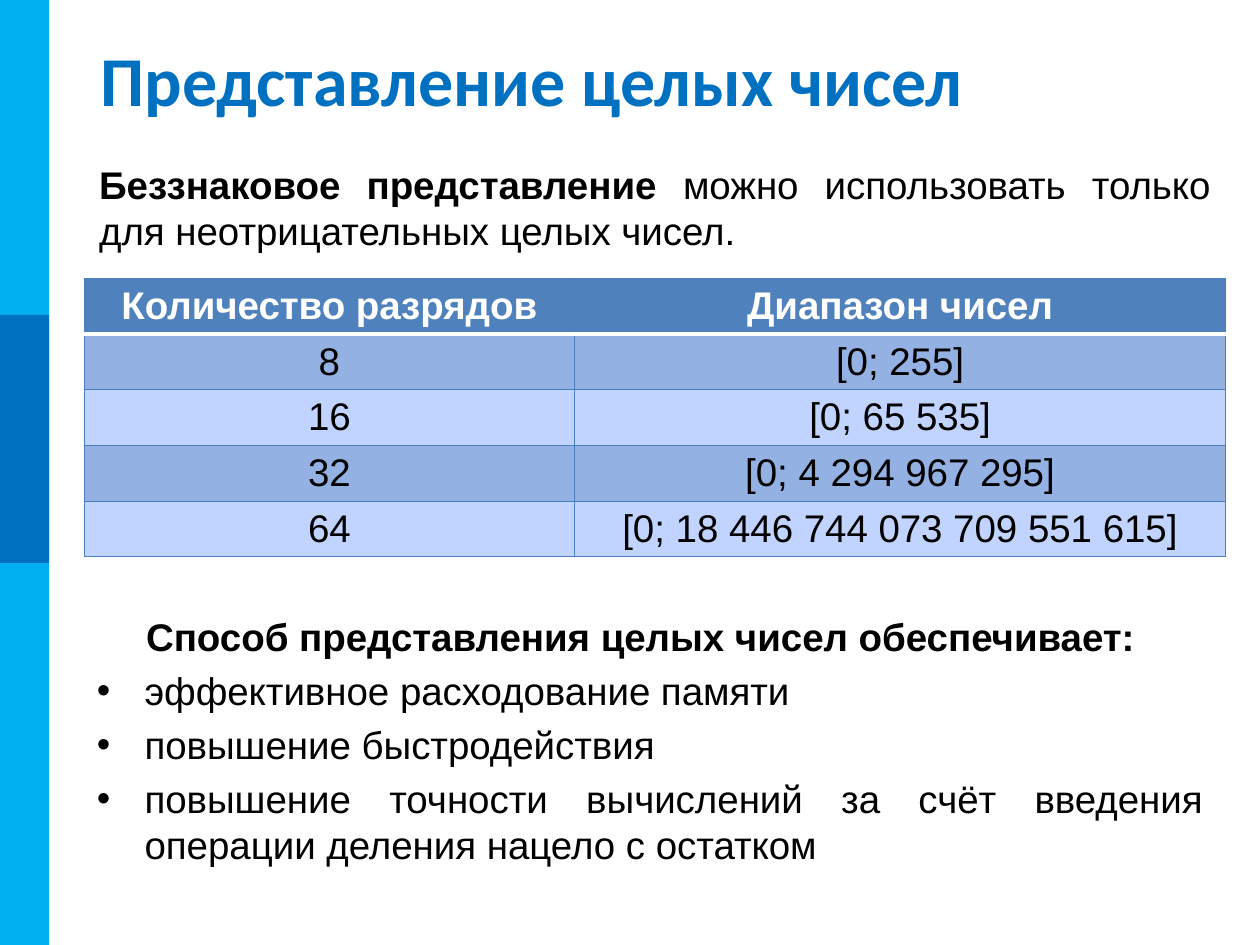
from dataclasses import dataclass

from lxml.etree import SubElement
from pptx import Presentation
from pptx.dml.color import RGBColor
from pptx.enum.shapes import MSO_SHAPE
from pptx.enum.text import MSO_ANCHOR, MSO_AUTO_SIZE, PP_ALIGN
from pptx.oxml.ns import qn
from pptx.util import Cm, Pt

BLUE, SKY, BLACK, WHITE = "0070C0", "00B0F0", "000000", "FFFFFF"
HEADER, BAND, LIGHT, GRID = "4F81BD", "93B1E3", "C0D4FF", "4B7EBC"


@dataclass
class Box:
    left: float
    top: float
    width: float
    height: float

    def emu(self) -> tuple:
        return Cm(self.left), Cm(self.top), Cm(self.width), Cm(self.height)


@dataclass
class Strip:
    box: Box
    color: str


@dataclass
class Item:
    text: str
    bold: bool = False
    bullet: bool = True


STRIPS = [
    Strip(Box(0, 0, 0.99, 19.05), SKY),
    Strip(Box(0, 6.35, 0.99, 5), BLUE),
]
ROWS = [
    ("Количество разрядов", "Диапазон чисел"),
    ("8", "[0; 255]"),
    ("16", "[0; 65 535]"),
    ("32", "[0; 4 294 967 295]"),
    ("64", "[0; 18 446 744 073 709 551 615]"),
]
ITEMS = [
    Item("Способ представления целых чисел обеспечивает:", bold=True, bullet=False),
    Item("эффективное расходование памяти"),
    Item("повышение быстродействия"),
    Item("повышение точности вычислений за счёт введения операции деления нацело с остатком"),
]


def rgb(color: str) -> RGBColor:
    return RGBColor.from_string(color)


def add_text(p, text: str, *, size=22, font="Arial", color=BLACK, bold=False, align=None):
    """Add one formatted run to a paragraph."""
    r = p.add_run()
    r.text = text
    r.font.size, r.font.name, r.font.bold = Pt(size), font, bold
    r.font.color.rgb = rgb(color)
    if align is not None:
        p.alignment = align


def place(sp, box: Box, anchor=MSO_ANCHOR.TOP):
    """Move a text shape and return its wrapped text frame."""
    sp.left, sp.top, sp.width, sp.height = box.emu()
    tf = sp.text_frame
    tf.word_wrap, tf.auto_size = True, MSO_AUTO_SIZE.NONE
    tf.vertical_anchor = anchor
    return tf


def add_strip(s, strip: Strip) -> None:
    sp = s.shapes.add_shape(MSO_SHAPE.RECTANGLE, *strip.box.emu())
    sp.shadow.inherit = False
    sp.fill.solid()
    sp.fill.fore_color.rgb = rgb(strip.color)
    sp.line.fill.background()


def set_item_indent(p, bullet: bool) -> None:
    pPr = p._p.get_or_add_pPr()
    pPr.set("marL", str(Cm(0.96) if bullet else 0))
    pPr.set("indent", str(Cm(-0.96) if bullet else Cm(0.99)))
    if bullet:
        SubElement(pPr, qn("a:buFont")).set("typeface", "Arial")
        SubElement(pPr, qn("a:buChar")).set("char", "•")
    else:
        SubElement(pPr, qn("a:buNone"))


def set_border(cell, side: str, color: str, width: float) -> None:
    ln = SubElement(cell._tc.get_or_add_tcPr(), qn(f"a:ln{side}"), w=str(Pt(width)))
    SubElement(SubElement(ln, qn("a:solidFill")), qn("a:srgbClr")).set("val", color)


def format_cell(cell, text: str, row: int) -> None:
    is_header = row == 0
    for side in "LRTB":
        below_header = (row, side) in ((0, "B"), (1, "T"))
        set_border(cell, side, *((WHITE, 2) if below_header else (GRID, 0.75)))
    cell.fill.solid()
    cell.fill.fore_color.rgb = rgb(HEADER if is_header else BAND if row % 2 else LIGHT)
    cell.vertical_anchor = MSO_ANCHOR.MIDDLE
    add_text(cell.text_frame.paragraphs[0], text, bold=is_header,
             color=WHITE if is_header else BLACK, align=PP_ALIGN.CENTER)


def add_range_table(s) -> None:
    widths, row_height = (9.88, 13.13), 1.12
    box = Box(1.7, 5.61, sum(widths), row_height * len(ROWS))
    table = s.shapes.add_table(len(ROWS), len(widths), *box.emu()).table
    for col, width in zip(table.columns, widths):
        col.width = Cm(width)
    for i, values in enumerate(ROWS):
        for j, text in enumerate(values):
            format_cell(table.cell(i, j), text, i)


def main() -> None:
    prs = Presentation()
    prs.slide_width, prs.slide_height = Cm(25.4), Cm(19.05)
    s = prs.slides.add_slide(prs.slide_layouts[1])

    # Side strips
    for strip in STRIPS:
        add_strip(s, strip)

    # Title
    tf = place(s.shapes.title, Box(1.78, 0.76, 22.91, 1.63), MSO_ANCHOR.MIDDLE)
    add_text(tf.paragraphs[0], "Представление целых чисел", size=40, font="Calibri",
             color=BLUE, bold=True, align=PP_ALIGN.LEFT)

    # Introduction
    box = Box(1.75, 3.12, 22.91, 2.13)
    p = place(s.shapes.add_textbox(*box.emu()), box).paragraphs[0]
    add_text(p, "Беззнаковое представление ", bold=True, align=PP_ALIGN.JUSTIFY)
    add_text(p, "можно использовать только для неотрицательных целых чисел.")

    # Table of ranges
    add_range_table(s)

    # List of advantages
    tf = place(s.placeholders[1], Box(1.7, 12.24, 22.81, 5.56))
    for i, item in enumerate(ITEMS):
        p = tf.add_paragraph() if i else tf.paragraphs[0]
        p.space_before = Pt(4.4)
        set_item_indent(p, item.bullet)
        add_text(p, item.text, bold=item.bold, align=PP_ALIGN.JUSTIFY)

    prs.save("out.pptx")


if __name__ == "__main__":
    main()
